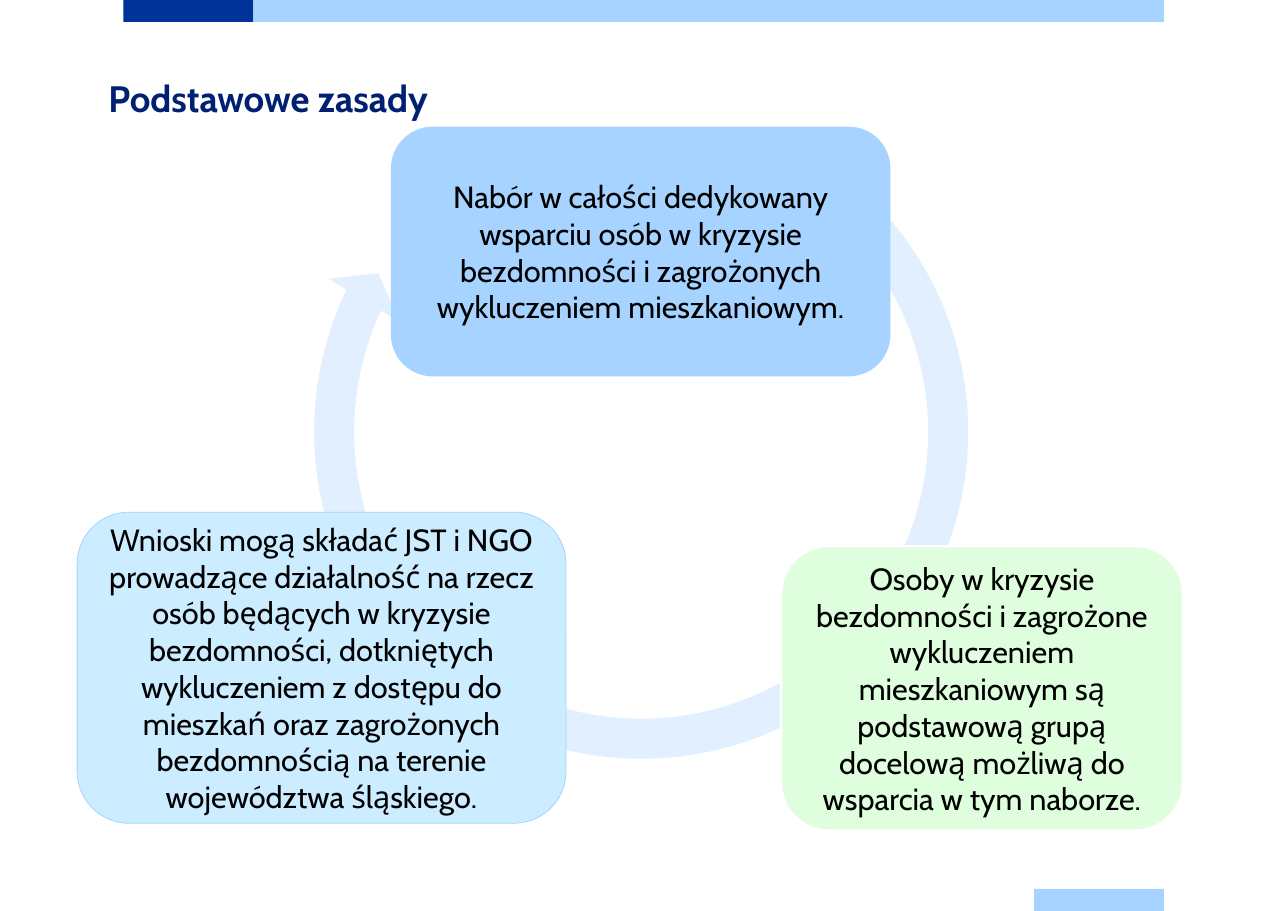
from pptx import Presentation
from pptx.dml.color import RGBColor
from pptx.enum.shapes import MSO_SHAPE
from pptx.enum.text import MSO_ANCHOR, MSO_AUTO_SIZE, PP_ALIGN
from pptx.util import Pt

RECT = MSO_SHAPE.RECTANGLE
ROUND = MSO_SHAPE.ROUNDED_RECTANGLE
CIRCULAR_ARROW = MSO_SHAPE.CIRCULAR_ARROW
TOP, MIDDLE = MSO_ANCHOR.TOP, MSO_ANCHOR.MIDDLE
LEFT, CENTER = PP_ALIGN.LEFT, PP_ALIGN.CENTER

NAVY = RGBColor(0x00, 0x20, 0x73)
BLUE = RGBColor(0x00, 0x33, 0x99)
SKY = RGBColor(0xA6, 0xD3, 0xFF)
PALE_BLUE = RGBColor(0xE1, 0xEF, 0xFF)
ICE = RGBColor(0xCC, 0xEC, 0xFF)
MINT = RGBColor(0xDE, 0xFE, 0xDE)
WHITE = RGBColor(0xFF, 0xFF, 0xFF)
BLACK = RGBColor(0x00, 0x00, 0x00)

WIDTH, HEIGHT = 841.68, 595.44
BAND_HEIGHT = 14.4
BAND_LEFT, BAND_STEP = 80.64, 85


def add_filled(kind, left, top, width, height, fill, line=None, line_width=0):
    sp = s.shapes.add_shape(kind, Pt(left), Pt(top), Pt(width), Pt(height))
    sp.shadow.inherit = False
    sp.fill.solid()
    sp.fill.fore_color.rgb = fill
    if line is None:
        sp.line.fill.background()
    else:
        sp.line.color.rgb = line
        sp.line.width = Pt(line_width)
    return sp


def write(tf, text, size=20, color=BLACK, bold=False, align=CENTER,
          anchor=MIDDLE, margin=6, spacing=None):
    tf.word_wrap = True
    tf.auto_size = MSO_AUTO_SIZE.NONE
    tf.vertical_anchor = anchor
    tf.margin_left = tf.margin_right = Pt(margin)
    tf.margin_top = tf.margin_bottom = Pt(margin)
    p = tf.paragraphs[0]
    p.alignment = align
    if spacing:
        p.line_spacing = Pt(spacing)
    r = p.add_run()
    r.text = text
    r.font.name = "Cabin"
    r.font.size = Pt(size)
    r.font.bold = bold
    r.font.color.rgb = color


prs = Presentation()
prs.slide_width, prs.slide_height = Pt(WIDTH), Pt(HEIGHT)
s = prs.slides.add_slide(prs.slide_layouts[5])

# Bands at the top and bottom edges: one step wide, or seven
bands = [
    (BAND_LEFT, 0, BAND_STEP, BLUE),
    (BAND_LEFT + BAND_STEP, 0, 7 * BAND_STEP, SKY),
    (BAND_LEFT + 7 * BAND_STEP, HEIGHT - BAND_HEIGHT, BAND_STEP, SKY),
]
for left, top, width, fill in bands:
    add_filled(RECT, left, top, width, BAND_HEIGHT, fill)

title = s.shapes.title
title.left, title.top = Pt(70.8), Pt(42.5)
title.width, title.height = Pt(692), Pt(62.6)
write(title.text_frame, "Podstawowe zasady", size=24, color=NAVY, bold=True,
      align=LEFT, anchor=TOP, margin=0, spacing=36)

# Cycle arrow; angles are in sixtieths of a degree divided by 100
cycle = add_filled(CIRCULAR_ARROW, 191.5, 54.7, 455, 455, PALE_BLUE)
for i, value in enumerate((0.0575, 3.405, 123.254, 183.391, 0.059)):
    cycle.adjustments[i] = value

principles = [
    ("Nabór w całości dedykowany wsparciu osób w kryzysie bezdomności "
     "i zagrożonych wykluczeniem mieszkaniowym.",
     (255.5, 82.8, 326.4, 163.2), SKY, None, 0),
    ("Osoby w kryzysie bezdomności i zagrożone wykluczeniem mieszkaniowym "
     "są podstawową grupą docelową możliwą do wsparcia w tym naborze.",
     (510.5, 357, 262.5, 185.8), MINT, WHITE, 1.5),
    ("Wnioski mogą składać JST i NGO prowadzące działalność na rzecz osób "
     "będących w kryzysie bezdomności, dotkniętych wykluczeniem z dostępu "
     "do mieszkań oraz zagrożonych bezdomnością na terenie województwa "
     "śląskiego.",
     (50.4, 334.8, 319.5, 203.3), ICE, SKY, 0.5),
]
for text, box, fill, line, line_width in principles:
    sp = add_filled(ROUND, *box, fill, line, line_width)
    write(sp.text_frame, text)

prs.save("out.pptx")
